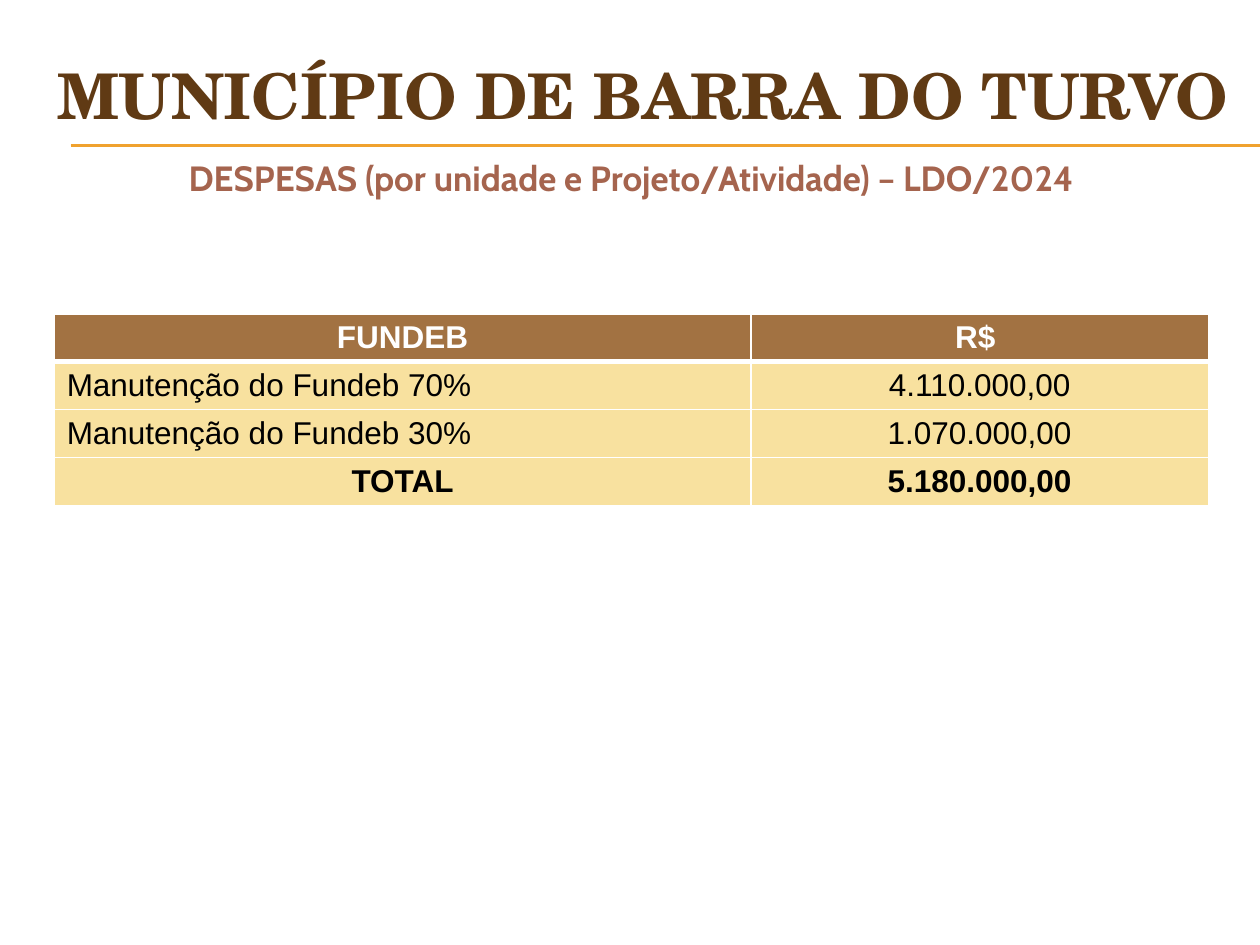
from lxml import etree
from pptx import Presentation
from pptx import util as u
from pptx.dml.color import RGBColor
from pptx.enum import shapes, text
from pptx.oxml.ns import qn

COLORS = {"title": "603A14", "subtitle": "A5644E", "rule": "F0A22E",
          "header": "A27242", "body": "F8E19F", "white": "FFFFFF", "black": "000000"}
LEFT, WIDTH = 0.43, 9.16
ROW_H = 0.37


def write(tf, content, size=18, font="Arial", color="black", bold=False,
          align=text.PP_ALIGN.CENTER, spacing=None):
    p = tf.paragraphs[0]
    p.alignment = align
    p.line_spacing = spacing
    r = p.add_run()
    r.text = content
    r.font.size = u.Pt(size)
    r.font.name = font
    r.font.bold = bold
    r.font.color.rgb = RGBColor.from_string(COLORS[color])


def set_borders(cell, **widths):
    """Draw white cell borders; widths in points, keyed by L, R, T, B."""
    tc_pr = cell._tc.get_or_add_tcPr()
    for i, (side, width) in enumerate(widths.items()):
        ln = etree.Element(qn(f"a:ln{side}"), w=str(u.Pt(width)))
        fill = etree.SubElement(ln, qn("a:solidFill"))
        etree.SubElement(fill, qn("a:srgbClr"), val=COLORS["white"])
        tc_pr.insert(i, ln)


prs = Presentation()
prs.slide_width, prs.slide_height = u.Inches(10), u.Inches(7.5)
s = prs.slides.add_slide(prs.slide_layouts[6])

# Double rule under the title
for y in (1.15, 1.16):
    rule = s.shapes.add_connector(shapes.MSO_CONNECTOR.STRAIGHT, u.Inches(0.56),
                                  u.Inches(y), prs.slide_width, u.Inches(y))
    rule.line.color.rgb = RGBColor.from_string(COLORS["rule"])
    rule.line.width = u.Pt(0.75)
    etree.SubElement(rule._element.spPr, qn("a:effectLst"))

# Expense table
rows = [("FUNDEB", "R$ "),
        ("Manutenção do Fundeb 70%", "4.110.000,00"),
        ("Manutenção do Fundeb 30%", "1.070.000,00"),
        ("TOTAL", "5.180.000,00")]
last = len(rows) - 1
table = s.shapes.add_table(len(rows), 2, u.Inches(LEFT), u.Inches(2.49),
                           u.Inches(WIDTH), u.Inches(ROW_H * len(rows))).table
for column, width in zip(table.columns, (5.53, 3.63)):
    column.width = u.Inches(width)
for i, row in enumerate(rows):
    table.rows[i].height = u.Inches(ROW_H)
    header = i == 0
    for j, content in enumerate(row):
        cell = table.cell(i, j)
        cell.fill.solid()
        cell.fill.fore_color.rgb = RGBColor.from_string(COLORS["header" if header else "body"])
        cell.vertical_anchor = text.MSO_ANCHOR.MIDDLE if header else text.MSO_ANCHOR.TOP
        set_borders(cell, L=1, R=1, T=3 if i == 1 else 1, B=3 if header else 1)
        is_label = j == 0 and 0 < i < last
        write(cell.text_frame, content, color="white" if header else "black",
              bold=i in (0, last),
              align=text.PP_ALIGN.LEFT if is_label else text.PP_ALIGN.CENTER)

# Title and subtitle
title = s.shapes.add_textbox(u.Inches(0.35), u.Inches(0.29), u.Inches(9.5), u.Inches(0.92))
tf = title.text_frame
tf.word_wrap = True
tf.margin_left = tf.margin_right = 0
tf.vertical_anchor = text.MSO_ANCHOR.MIDDLE
write(tf, "MUNICÍPIO DE BARRA DO TURVO", size=36, font="TeX Gyre Schola",
      color="title", bold=True)

subtitle = s.shapes.add_textbox(u.Inches(LEFT), u.Inches(1.23), u.Inches(WIDTH), u.Inches(0.47))
tf = subtitle.text_frame
tf.word_wrap = True
write(tf, "DESPESAS (por unidade e Projeto/Atividade) – LDO/2024", size=20,
      font="Cabin", color="subtitle", bold=True, spacing=0.9)

prs.save("out.pptx")
